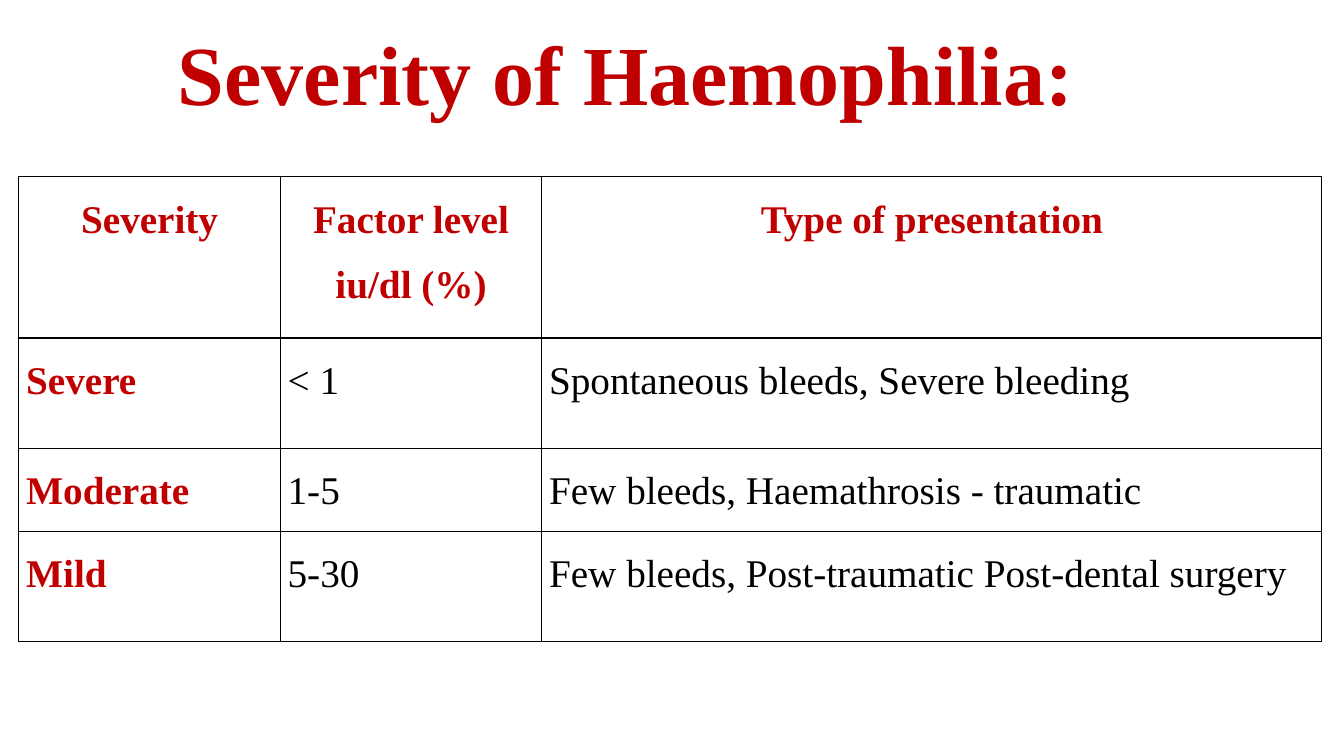
from lxml import etree
from pptx import Presentation
from pptx.dml.color import RGBColor
from pptx.enum.text import MSO_ANCHOR, PP_ALIGN
from pptx.oxml.ns import qn
from pptx.util import Pt

LEFT, CENTER = PP_ALIGN.LEFT, PP_ALIGN.CENTER
TOP, MIDDLE = MSO_ANCHOR.TOP, MSO_ANCHOR.MIDDLE
EMU_PER_PX = 9525
RED, BLACK, WHITE = "C00000", "000000", "FFFFFF"

COLUMN_WIDTHS = [249, 249, 743]
ROW_HEIGHTS = [154, 105, 79, 105]
SEVERITY_ROWS = [
    ["Severity", "Factor level iu/dl (%)", "Type of presentation"],
    ["Severe", "< 1", "Spontaneous bleeds, Severe bleeding"],
    ["Moderate", "1-5", "Few bleeds, Haemathrosis - traumatic"],
    ["Mild", "5-30", "Few bleeds, Post-traumatic Post-dental surgery"],
]


def px(length):
    return length * EMU_PER_PX


def color(value):
    return RGBColor.from_string(value)


def write(frame, text, *, font, size, fill, bold=False, align=LEFT, spacing=1.0):
    para = frame.paragraphs[0]
    para.alignment = align
    para.line_spacing = spacing
    span = para.add_run()
    span.text = text
    span.font.name = font
    span.font.size = Pt(size)
    span.font.bold = bold
    span.font.color.rgb = color(fill)


class SlideBuilder:
    """Hold the style and the current slide, and add elements to it."""

    font = "Times New Roman"
    title_size = 60
    cell_size = 28
    cell_margin = 7
    border_width = 1

    def __init__(self, page):
        self.page = page

    def title(self, text, left, top, width, height):
        box = self.page.shapes.add_textbox(px(left), px(top), px(width), px(height))
        frame = box.text_frame
        frame.word_wrap = True
        frame.vertical_anchor = MIDDLE
        write(frame, text, font=self.font, size=self.title_size, fill=RED,
              bold=True, spacing=0.9)

    def table(self, rows, left, top, widths, heights):
        table = self.page.shapes.add_table(
            len(rows), len(widths), px(left), px(top),
            px(sum(widths)), px(sum(heights))).table
        table.first_row = False
        table.horz_banding = False
        for column, width in zip(table.columns, widths):
            column.width = px(width)
        for row, height in zip(table.rows, heights):
            row.height = px(height)
        for row_index, texts in enumerate(rows):
            for column_index, text in enumerate(texts):
                self.cell(table.cell(row_index, column_index), text,
                          is_header=row_index == 0, is_label=column_index == 0)

    def cell(self, cell, text, is_header, is_label):
        cell.margin_left = cell.margin_right = px(self.cell_margin)
        cell.margin_top = cell.margin_bottom = 0
        cell.vertical_anchor = TOP
        self.borders(cell)
        cell.fill.solid()
        cell.fill.fore_color.rgb = color(WHITE)
        strong = is_header or is_label
        write(cell.text_frame, text, font=self.font, size=self.cell_size,
              fill=RED if strong else BLACK, bold=strong,
              align=CENTER if is_header else LEFT, spacing=1.5)

    def borders(self, cell):
        properties = cell._tc.get_or_add_tcPr()
        for side in ("a:lnL", "a:lnR", "a:lnT", "a:lnB"):
            line = etree.SubElement(properties, qn(side), w=str(Pt(self.border_width)))
            solid = etree.SubElement(line, qn("a:solidFill"))
            etree.SubElement(solid, qn("a:srgbClr"), val=BLACK)


def main():
    deck = Presentation()
    deck.slide_width, deck.slide_height = px(1280), px(720)
    builder = SlideBuilder(deck.slides.add_slide(deck.slide_layouts[6]))
    builder.title("Severity of Haemophilia:", 160, 0, 960, 149)
    builder.table(SEVERITY_ROWS, 18, 168, COLUMN_WIDTHS, ROW_HEIGHTS)
    deck.save("out.pptx")


if __name__ == "__main__":
    main()
